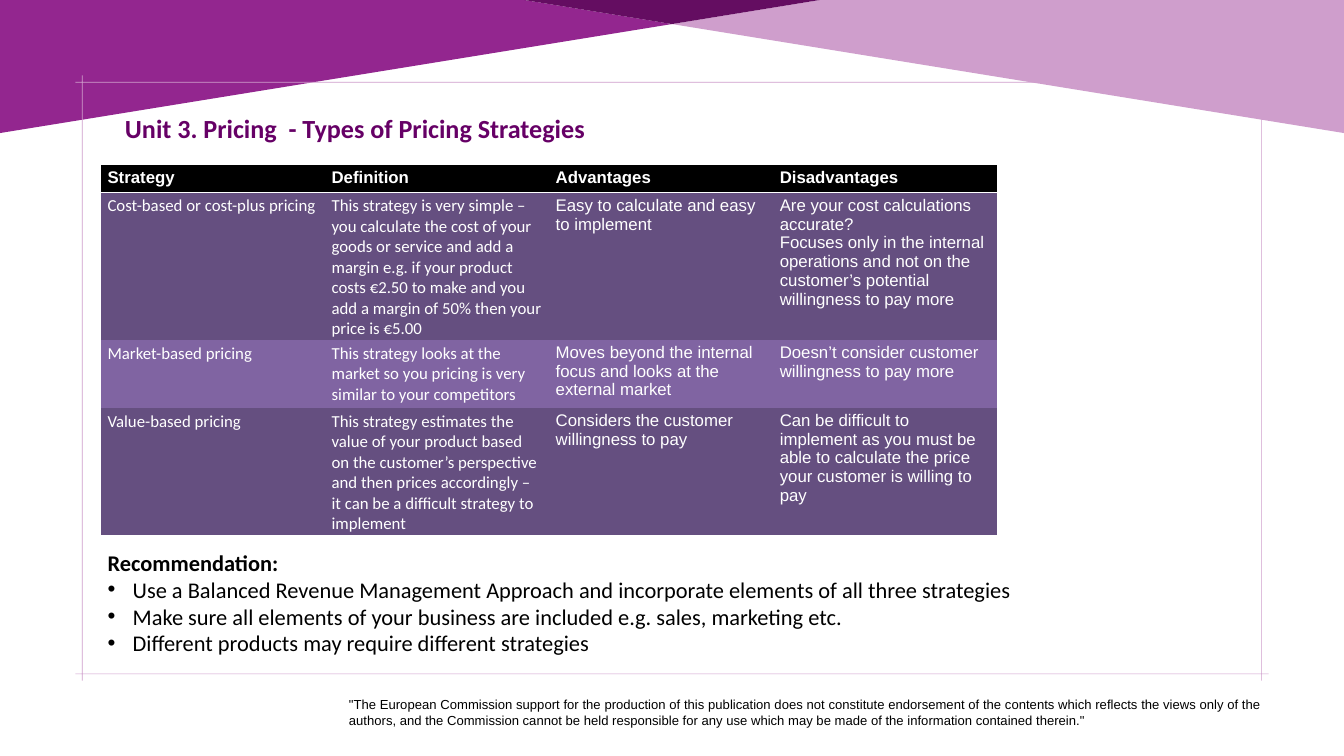
from lxml.etree import SubElement
from pptx import Presentation
from pptx.dml.color import RGBColor
from pptx.enum.text import MSO_ANCHOR, MSO_AUTO_SIZE, PP_ALIGN
from pptx.oxml.ns import qn
from pptx.util import Cm, Pt

WHITE = RGBColor(0xFF, 0xFF, 0xFF)
BLACK = RGBColor(0x00, 0x00, 0x00)
PURPLE = RGBColor(0x93, 0x26, 0x8F)
PINK = RGBColor(0xCF, 0x9E, 0xCC)
PLUM = RGBColor(0x64, 0x0D, 0x61)
TITLE_COLOR = RGBColor(0x66, 0x00, 0x66)
ROW_DARK = RGBColor(0x65, 0x4F, 0x80)
ROW_LIGHT = RGBColor(0x80, 0x64, 0xA2)
NO_STYLE = "{2D5ABB26-0587-4C30-8999-92F81FD0307C}"

# Content
TITLE = "Unit 3. Pricing  - Types of Pricing Strategies"
TABLE = [
    ("Strategy", "Definition", "Advantages", "Disadvantages"),
    ("Cost-based or cost-plus pricing",
     "This strategy is very simple – you calculate the cost of your goods or "
     "service and add a margin e.g. if your product costs €2.50 to make and "
     "you add a margin of 50% then your price is €5.00",
     "Easy to calculate and easy to implement",
     "Are your cost calculations accurate?\n"
     "Focuses only in the internal operations and not on the customer’s "
     "potential willingness to pay more"),
    ("Market-based pricing",
     "This strategy looks at the market so you pricing is very similar to "
     "your competitors",
     "Moves beyond the internal focus and looks at the external market",
     "Doesn’t consider customer willingness to pay more"),
    ("Value-based pricing",
     "This strategy estimates the value of your product based on the "
     "customer’s perspective and then prices accordingly – it can be a "
     "difficult strategy to implement",
     "Considers the customer willingness to pay",
     "Can be difficult to implement as you must be able to calculate the "
     "price your customer is willing to pay"),
]
RECOMMENDATION = [
    "Recommendation:",
    "Use a Balanced Revenue Management Approach and incorporate elements of all three strategies",
    "Make sure all elements of your business are included e.g. sales, marketing etc.",
    "Different products may require different strategies",
]
DISCLAIMER = (
    '"The European Commission support for the production of this publication '
    "does not constitute endorsement of the contents which reflects the views "
    "only of the authors, and the Commission cannot be held responsible for "
    'any use which may be made of the information contained therein."')

# Layout in centimetres
ROW_HEIGHTS = [1.03, 5.56, 2.57, 4.8]
ROW_FILLS = [BLACK, ROW_DARK, ROW_LIGHT, ROW_DARK]
COL_WIDTH = 8.47
WEDGES = [
    (PURPLE, [(0, 5.03), (0, 0), (19.81, 0), (25.4, 0.91)]),
    (PINK, [(50.8, 5.03), (25.4, 0.91), (30.99, 0), (50.8, 0)]),
    (PLUM, [(25.4, 0.91), (19.81, 0), (30.99, 0)]),
]
# Frame: outer and inner edge of its lines, tip of the overhang, mirror sums
OUTER, INNER, TIP = 3.1, 3.12, 2.85
MIRROR_X, MIRROR_Y = 50.8, 28.58


def place(sp, left, top, width, height):
    sp.left, sp.top, sp.width, sp.height = Cm(left), Cm(top), Cm(width), Cm(height)
    tf = sp.text_frame
    tf.word_wrap = True
    tf.auto_size = MSO_AUTO_SIZE.NONE
    tf.vertical_anchor = MSO_ANCHOR.TOP
    return tf


def style(p, name, size, color, bold=False, align=PP_ALIGN.LEFT):
    p.alignment = align
    for r in p.runs:
        f = r.font
        f.name, f.size, f.bold = name, Pt(size), bold
        f.color.rgb = color


def add_outline(s, color, *contours):
    builder = None
    for points in contours:
        start, *rest = [(Cm(x), Cm(y)) for x, y in points]
        if builder is None:
            builder = s.shapes.build_freeform(*start)
        else:
            builder.move_to(*start)
        builder.add_line_segments(rest, close=True)
    sp = builder.convert_to_shape()
    sp.shadow.inherit = False
    sp.fill.solid()
    sp.fill.fore_color.rgb = color
    sp.line.fill.background()


def mirror_corner(points):
    """Repeat a top-left corner clockwise around all four corners."""
    top_right = [(MIRROR_X - x, y) for x, y in reversed(points)]
    top = points + top_right
    return top + [(x, MIRROR_Y - y) for x, y in reversed(top)]


def add_frame(s):
    corner = [(OUTER, INNER), (TIP, INNER), (TIP, OUTER), (OUTER, OUTER),
              (OUTER, TIP), (INNER, TIP), (INNER, OUTER)]
    hole = mirror_corner([(INNER, INNER)])
    add_outline(s, PINK, mirror_corner(corner), hole[::-1])


def add_bottom_border(cell, color, width):
    tc_pr = cell._tc.get_or_add_tcPr()
    border = tc_pr.makeelement(qn("a:lnB"), {"w": str(Pt(width))})
    tc_pr.insert(0, border)
    fill = SubElement(border, qn("a:solidFill"))
    SubElement(fill, qn("a:srgbClr"), val=str(color))


def add_strategy_table(s):
    rows, cols = len(TABLE), len(TABLE[0])
    table = s.shapes.add_table(
        rows, cols, Cm(3.81), Cm(6.25),
        Cm(COL_WIDTH * cols), Cm(sum(ROW_HEIGHTS))).table
    table._tbl.tblPr.find(qn("a:tableStyleId")).text = NO_STYLE
    for col in table.columns:
        col.width = Cm(COL_WIDTH)
    for i, (texts, height, color) in enumerate(zip(TABLE, ROW_HEIGHTS, ROW_FILLS)):
        table.rows[i].height = Cm(height)
        for j, text in enumerate(texts):
            cell = table.cell(i, j)
            cell.margin_bottom = 0
            cell.text_frame.text = text
            cell.fill.solid()
            cell.fill.fore_color.rgb = color
            name = "Calibri" if i > 0 and j < 2 else "Arial"
            for p in cell.text_frame.paragraphs:
                style(p, name, 18, WHITE, bold=i == 0)
            if i == 0:
                add_bottom_border(cell, WHITE, 1.5)


def fill_recommendation(tf):
    tf.text = "\n".join(RECOMMENDATION)
    for i, p in enumerate(tf.paragraphs):
        p_pr = p._p.get_or_add_pPr()
        indent = Cm(0.95) if i else 0
        p_pr.set("marL", str(indent))
        p_pr.set("indent", str(-indent))
        if i:
            SubElement(p_pr, qn("a:buFont"), typeface="Arial")
            SubElement(p_pr, qn("a:buChar"), char="•")
        else:
            SubElement(p_pr, qn("a:buNone"))
        p.space_before = Pt(0)
        style(p, "Calibri", 24, BLACK, bold=i == 0)


def main():
    prs = Presentation()
    prs.slide_width = Cm(50.8)
    prs.slide_height = prs.slide_width * 9 // 16
    s = prs.slides.add_slide(prs.slide_layouts[1])
    title, body = s.placeholders

    # Background wedges and frame
    for color, points in WEDGES:
        add_outline(s, color, points)
    add_frame(s)

    # Title
    tf = place(title, 4.47, 4.11, 40.44, 1.45)
    tf.text = TITLE
    style(tf.paragraphs[0], "Calibri", 28, TITLE_COLOR, bold=True)

    # Table and recommendation
    add_strategy_table(s)
    fill_recommendation(place(body, 3.81, 20.62, 40.44, 4.37))

    # Disclaimer
    box = s.shapes.add_textbox(0, 0, 0, 0)
    tf = place(box, 12.94, 26.14, 35, 1.32)
    tf.text = DISCLAIMER
    p = tf.paragraphs[0]
    p.line_spacing = 1.07
    style(p, "Arial", 14, BLACK, align=PP_ALIGN.JUSTIFY)

    # Title and list stay above the wedges
    for sp in (title, body):
        s.shapes._spTree.append(sp._element)

    prs.save("out.pptx")


if __name__ == "__main__":
    main()
